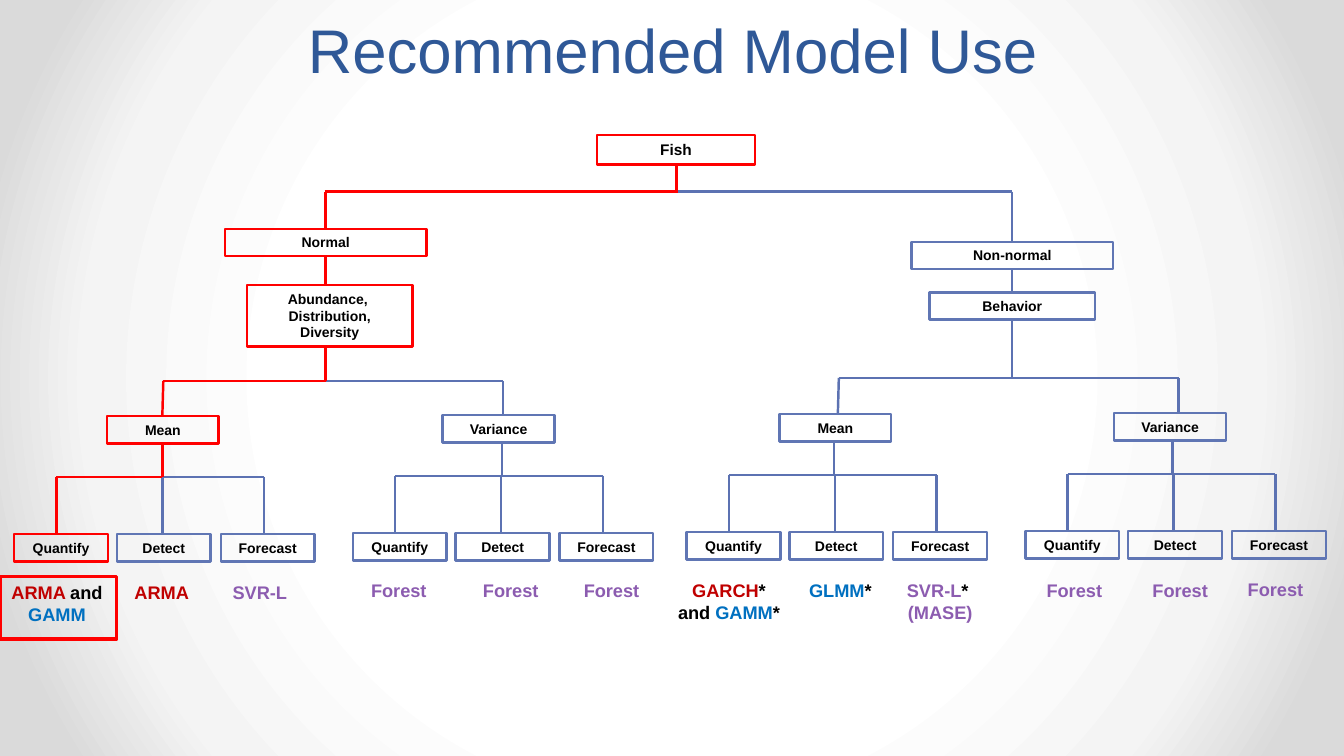
"""Builds the Recommended Model Use decision-tree slide."""
from typing import NamedTuple

from lxml.etree import SubElement
from pptx import Presentation
from pptx.dml.color import RGBColor
from pptx.enum.shapes import MSO_CONNECTOR as Connector, MSO_SHAPE as Shape
from pptx.enum.text import MSO_ANCHOR as Anchor, MSO_AUTO_SIZE as AutoSize, PP_ALIGN as Align
from pptx.oxml.ns import qn
from pptx.util import Pt

PX = 9144
BLACK, BLUE, BOX_BLUE, RED = "000000", "5C72B2", "6076B4", "FF0000"
TITLE_BLUE, CRIMSON, SKY, PURPLE = "2F5897", "C00000", "0070C0", "8C5CB0"
Paragraphs = tuple[tuple[tuple[str, str], ...], ...]
FOREST: Paragraphs = ((("Forest", PURPLE),),)


class Node(NamedTuple):
    left: int
    top: int
    width: int
    height: int
    lines: tuple[str, ...] = ()
    edge: str = BOX_BLUE
    size: int = 10
    weight: float = 1.75


class Segment(NamedTuple):
    x1: int
    y1: int
    x2: int
    y2: int
    color: str = BLUE


class Advice(NamedTuple):
    left: int
    top: int
    width: int
    height: int
    paragraphs: Paragraphs


class Branch(NamedTuple):
    statistic: str
    statistic_left: int
    tasks_left: int
    tasks_top: int
    stem: int
    edge: str = BOX_BLUE


NODES = [
    Node(592, 134, 157, 29, ("Fish",), RED, 11),
    Node(223, 227, 200, 27, ("Normal",), RED),
    Node(245, 283, 164, 61, ("Abundance, ", "Distribution,", "Diversity"), RED),
    Node(904, 240, 200, 27, ("Non-normal",)),
    Node(922, 290, 164, 27, ("Behavior",)),
    Node(0, 572, 116, 62, edge=RED, weight=2.25),
]

BRANCHES = [
    Branch("Mean", 106, 14, 530, 161, RED),
    Branch("Variance", 439, 350, 529, 498),
    Branch("Mean", 773, 681, 528, 827),
    Branch("Variance", 1105, 1017, 527, 1163),
]
TASKS = [("Quantify", 0, 42), ("Detect", 102, 147), ("Forecast", 205, 248)]

SEGMENTS = [
    Segment(671, 190, 1004, 190),
    Segment(1004, 190, 1004, 240),
    Segment(1004, 267, 1004, 290),
    Segment(1004, 317, 1004, 375),
    Segment(832, 375, 1169, 375),
    Segment(832, 375, 831, 411),
    Segment(1169, 375, 1169, 410),
    Segment(323, 378, 499, 378),
    Segment(499, 378, 499, 413),
    Segment(671, 162, 671, 190, RED),
    Segment(322, 190, 672, 190, RED),
    Segment(323, 190, 323, 227, RED),
    Segment(323, 254, 323, 283, RED),
    Segment(323, 343, 323, 378, RED),
    Segment(162, 378, 323, 378, RED),
    Segment(162, 378, 161, 413, RED),
]

ADVICE = [
    Advice(-4, 572, 121, 54, ((("ARMA ", CRIMSON), ("and ", BLACK), ("GAMM", SKY)),)),
    Advice(101, 572, 123, 32, ((("ARMA ", CRIMSON),),)),
    Advice(201, 572, 118, 32, ((("SVR-L ", PURPLE),),)),
    Advice(334, 570, 123, 32, FOREST),
    Advice(445, 570, 123, 32, FOREST),
    Advice(545, 570, 123, 32, FOREST),
    Advice(659, 570, 128, 54,
           ((("GARCH", CRIMSON), ("* and ", BLACK), ("GAMM", SKY), ("*", BLACK)),)),
    Advice(768, 570, 131, 32, ((("GLMM", SKY), ("*", BLACK)),)),
    Advice(860, 570, 145, 54,
           ((("SVR-L", PURPLE), ("* ", BLACK)), (("(MASE)", PURPLE),))),
    Advice(1004, 570, 123, 32, FOREST),
    Advice(1109, 570, 123, 32, FOREST),
    Advice(1214, 569, 102, 32, FOREST),
]


def rgb(color: str) -> RGBColor:
    """Turn a hex string into a colour."""
    return RGBColor.from_string(color)


def write(frame, paragraphs: Paragraphs, size: int, bold: bool = True) -> None:
    """Fill a text frame with centred paragraphs, run by run."""
    frame.word_wrap = True
    frame.auto_size = AutoSize.NONE
    frame.vertical_anchor = Anchor.TOP
    for index, pieces in enumerate(paragraphs):
        paragraph = frame.add_paragraph() if index else frame.paragraphs[0]
        paragraph.alignment = Align.CENTER
        for text, color in pieces:
            run = paragraph.add_run()
            run.text = text
            run.font.name, run.font.size, run.font.bold = "Arial", Pt(size), bold
            run.font.color.rgb = rgb(color)


def paint_background(slide) -> None:
    """Give the slide a radial gradient, white in the middle."""
    fill = slide.background.fill
    fill.gradient()
    gradient = slide.background._cSld.find(".//" + qn("a:gradFill"))
    for child in list(gradient):
        gradient.remove(child)
    stops = SubElement(gradient, qn("a:gsLst"))
    for percent, color in [(50, "FFFFFF"), (76, "F4F4F4"), (92, "DADADA")]:
        stop = SubElement(stops, qn("a:gs"), pos=str(percent * 1000))
        SubElement(stop, qn("a:srgbClr"), val=color)
    circle = SubElement(gradient, qn("a:path"), {"path": "circle"})
    SubElement(circle, qn("a:fillToRect"), dict.fromkeys("ltrb", "50000"))


def draw_title(slide) -> None:
    """Place and format the slide title."""
    title = slide.shapes.title
    title.left, title.top, title.width, title.height = 0, 0, 1335 * PX, 75 * PX
    write(title.text_frame, ((("Recommended Model Use", TITLE_BLUE),),), 44, False)
    title.text_frame.paragraphs[0].line_spacing = Pt(58)


def draw_segment(slide, segment: Segment) -> None:
    """Draw one straight line of the tree."""
    ends = (length * PX for length in segment[:4])
    connector = slide.shapes.add_connector(Connector.STRAIGHT, *ends)
    connector.line.color.rgb = rgb(segment.color)
    connector.line.width = Pt(1.75)
    SubElement(connector._element.spPr, qn("a:effectLst"))


def draw_node(slide, node: Node) -> None:
    """Draw one outlined box with its text."""
    box = slide.shapes.add_shape(Shape.RECTANGLE, *(length * PX for length in node[:4]))
    box.shadow.inherit = False
    box.fill.background()
    box.line.color.rgb = rgb(node.edge)
    box.line.width = Pt(node.weight)
    write(box.text_frame, tuple(((line, BLACK),) for line in node.lines), node.size)


def draw_advice(slide, advice: Advice) -> None:
    """Write the recommended model below a task."""
    label = slide.shapes.add_textbox(*(length * PX for length in advice[:4]))
    write(label.text_frame, advice.paragraphs, 13)


def draw_branch(slide, branch: Branch) -> None:
    """Draw a statistic, its three tasks and the lines between them."""
    left, top, stem = branch.tasks_left, branch.tasks_top, branch.stem
    bus = top - 57
    drops = [left + drop for _, _, drop in TASKS]
    draw_segment(slide, Segment(drops[0], bus, drops[-1], bus))
    for drop in drops:
        draw_segment(slide, Segment(drop, bus, drop, top))
    trunk = RED if branch.edge == RED else BLUE
    draw_segment(slide, Segment(stem, top - 91, stem, bus, trunk))
    if trunk == RED:
        draw_segment(slide, Segment(drops[0], bus, stem, bus, RED))
        draw_segment(slide, Segment(drops[0], bus, drops[0], top, RED))
    draw_node(slide, Node(branch.statistic_left, top - 117, 111, 27,
                          (branch.statistic,), branch.edge))
    for task, offset, _ in TASKS:
        edge = branch.edge if task == "Quantify" else BOX_BLUE
        draw_node(slide, Node(left + offset, top, 93, 27, (task,), edge))


def main() -> None:
    """Build the slide and save it."""
    deck = Presentation()
    deck.slide_width, deck.slide_height = 1333 * PX, 750 * PX
    slide = deck.slides.add_slide(deck.slide_layouts.get_by_name("Title Only"))
    paint_background(slide)
    draw_title(slide)
    for advice in ADVICE:
        draw_advice(slide, advice)
    for segment in SEGMENTS:
        draw_segment(slide, segment)
    for branch in BRANCHES:
        draw_branch(slide, branch)
    for node in NODES:
        draw_node(slide, node)
    deck.save("out.pptx")


if __name__ == "__main__":
    main()
